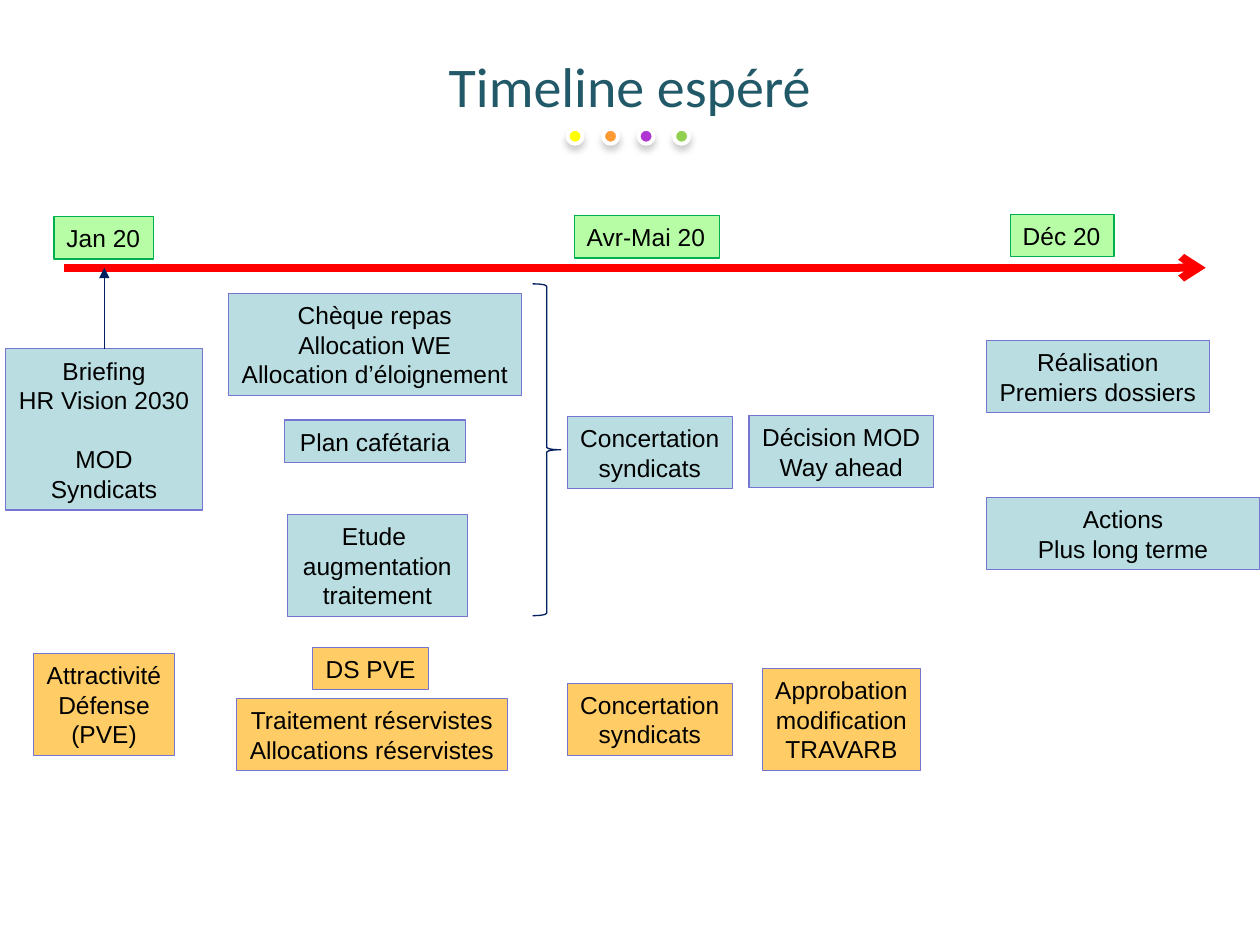
from dataclasses import dataclass

from lxml import etree
from pptx import Presentation
from pptx.dml.color import RGBColor
from pptx.enum.shapes import MSO_CONNECTOR, MSO_SHAPE
from pptx.enum.text import MSO_ANCHOR, PP_ALIGN
from pptx.oxml.ns import qn
from pptx.util import Pt

RECT, OVAL, BRACE = MSO_SHAPE.RECTANGLE, MSO_SHAPE.OVAL, MSO_SHAPE.RIGHT_BRACE
STRAIGHT = MSO_CONNECTOR.STRAIGHT
LEFT, CENTER = PP_ALIGN.LEFT, PP_ALIGN.CENTER
MIDDLE = MSO_ANCHOR.MIDDLE

COLORS = {
    "title": "215968", "text": "000000", "timeline": "FF0000", "navy": "002060",
    "date": "B6FDA5", "date_line": "00B050",
    "step": "BADDE1", "reserve": "FFCC66", "box_line": "7575D1",
    "yellow": "FFFF00", "orange": "FF9933", "purple": "B034D2", "green": "92D050",
    "white": "FFFFFF",
}
LINE_PITCH = 16.9
BOX_HEIGHT = {1: 24.3, 2: 41.2, 3: 58.2, 5: 92.2}  # by number of text lines


@dataclass(frozen=True)
class Box:
    left: float
    top: float
    width: float
    text: str
    kind: str = "step"
    wrap: bool = False


BOXES = [
    # Dates above the timeline
    Box(30.9, 123.8, 56.9, "Jan 20", "date"),
    Box(328.2, 123.1, 82.9, "Avr-Mai 20", "date"),
    Box(577.3, 122.4, 59.3, "Déc 20", "date"),
    # Main steps
    Box(3.3, 199.2, 112.4, "Briefing\nHR Vision 2030\n\nMOD\nSyndicats"),
    Box(130.5, 167.7, 167.4, "Chèque repas\nAllocation WE\nAllocation d’éloignement"),
    Box(162.6, 240, 103.5, "Plan cafétaria", wrap=True),
    Box(164.2, 294, 103, "Etude \naugmentation\ntraitement", wrap=True),
    Box(324.2, 237.9, 94.3, "Concertation\nsyndicats"),
    Box(428, 237.4, 105.5, "Décision MOD\nWay ahead"),
    Box(563.7, 194.5, 127.4, "Réalisation\nPremiers dossiers"),
    Box(563.7, 284.2, 156.2, "Actions\nPlus long terme", wrap=True),
    # Reservist steps
    Box(19.1, 373.4, 80.7, "Attractivité\nDéfense\n(PVE)", "reserve"),
    Box(178.5, 369.8, 66.6, "DS PVE", "reserve"),
    Box(135.1, 399.2, 154.9, "Traitement réservistes\nAllocations réservistes", "reserve"),
    Box(324.2, 390.4, 94.3, "Concertation\nsyndicats", "reserve"),
    Box(435.6, 382, 90.5, "Approbation\nmodification\nTRAVARB", "reserve"),
]


def rgb(name: str) -> RGBColor:
    return RGBColor.from_string(COLORS[name])


def write_text(sp, text: str, *, size: float = 14, font: str = "Arial",
               color: str = "text", align=CENTER, wrap: bool = False,
               pitch: float | None = None) -> None:
    """Write one paragraph per line; an empty line becomes space before the next."""
    tf = sp.text_frame
    tf.word_wrap = wrap
    tf.vertical_anchor = MIDDLE
    p, gap = None, 0.0
    for line in text.split("\n"):
        if not line:
            gap += pitch or size * 1.2
            continue
        p = tf.paragraphs[0] if p is None else tf.add_paragraph()
        p.alignment = align
        if pitch:
            p.line_spacing = Pt(pitch)
        if gap:
            p.space_before = Pt(gap)
            gap = 0.0
        r = p.add_run()
        r.text = line
        r.font.size = Pt(size)
        r.font.name = font
        r.font.color.rgb = rgb(color)


def add_shape(shapes, kind, left: float, top: float, width: float, height: float,
              *, fill: str | None, line: str, weight: float = 0.75):
    sp = shapes.add_shape(kind, Pt(left), Pt(top), Pt(width), Pt(height))
    sp.shadow.inherit = False
    if fill:
        sp.fill.solid()
        sp.fill.fore_color.rgb = rgb(fill)
    else:
        sp.fill.background()
    sp.line.color.rgb = rgb(line)
    sp.line.width = Pt(weight)
    return sp


def add_box(shapes, box: Box) -> None:
    is_date = box.kind == "date"
    height = BOX_HEIGHT[box.text.count("\n") + 1]
    sp = add_shape(shapes, RECT, box.left, box.top, box.width, height,
                   fill=box.kind, line="date_line" if is_date else "box_line")
    write_text(sp, box.text, align=LEFT if is_date else CENTER,
               wrap=box.wrap, pitch=LINE_PITCH)


def add_arrow(shapes, x1: float, y1: float, x2: float, y2: float,
              *, color: str, weight: float, head: str) -> None:
    line = shapes.add_connector(STRAIGHT, Pt(x1), Pt(y1), Pt(x2), Pt(y2))
    line.line.color.rgb = rgb(color)
    line.line.width = Pt(weight)
    etree.SubElement(line.line._get_or_add_ln(), qn("a:tailEnd"), type=head)
    etree.SubElement(line._element.spPr, qn("a:effectLst"))


def add_soft_shadow(sp) -> None:
    effects = sp._element.spPr.find(qn("a:effectLst"))
    shadow = etree.SubElement(effects, qn("a:outerShdw"), blurRad=str(Pt(4)),
                              dist=str(Pt(3)), dir="5400000", rotWithShape="0")
    color = etree.SubElement(shadow, qn("a:srgbClr"), val=COLORS["text"])
    etree.SubElement(color, qn("a:alpha"), val="20000")


def main() -> None:
    prs = Presentation()
    prs.slide_width, prs.slide_height = Pt(720), Pt(540)
    s = prs.slides.add_slide(prs.slide_layouts[6])

    # Title
    title = s.shapes.add_textbox(Pt(36), Pt(21.6), Pt(648), Pt(54))
    write_text(title, "Timeline espéré", size=32, font="Calibri", color="title", wrap=True)

    # Timeline, dates and steps
    add_arrow(s.shapes, 36.7, 153, 689, 153, color="timeline", weight=4.5, head="arrow")
    for box in BOXES:
        add_box(s.shapes, box)

    # Brace joining the studies, and the link from the briefing to its date
    add_shape(s.shapes, BRACE, 304.4, 162.2, 16, 189.6, fill=None, line="navy")
    add_arrow(s.shapes, 59.6, 199.2, 59.6, 153, color="navy", weight=0.75, head="triangle")

    # Row of dots under the title
    dots = s.shapes.add_group_shape()
    for i, color in enumerate(("yellow", "orange", "purple", "green")):
        dot = add_shape(dots.shapes, OVAL, 324.3 + 20.3 * i, 73.6, 8.6, 8.6,
                        fill=color, line="white", weight=2.25)
        add_soft_shadow(dot)

    prs.save("out.pptx")


if __name__ == "__main__":
    main()
